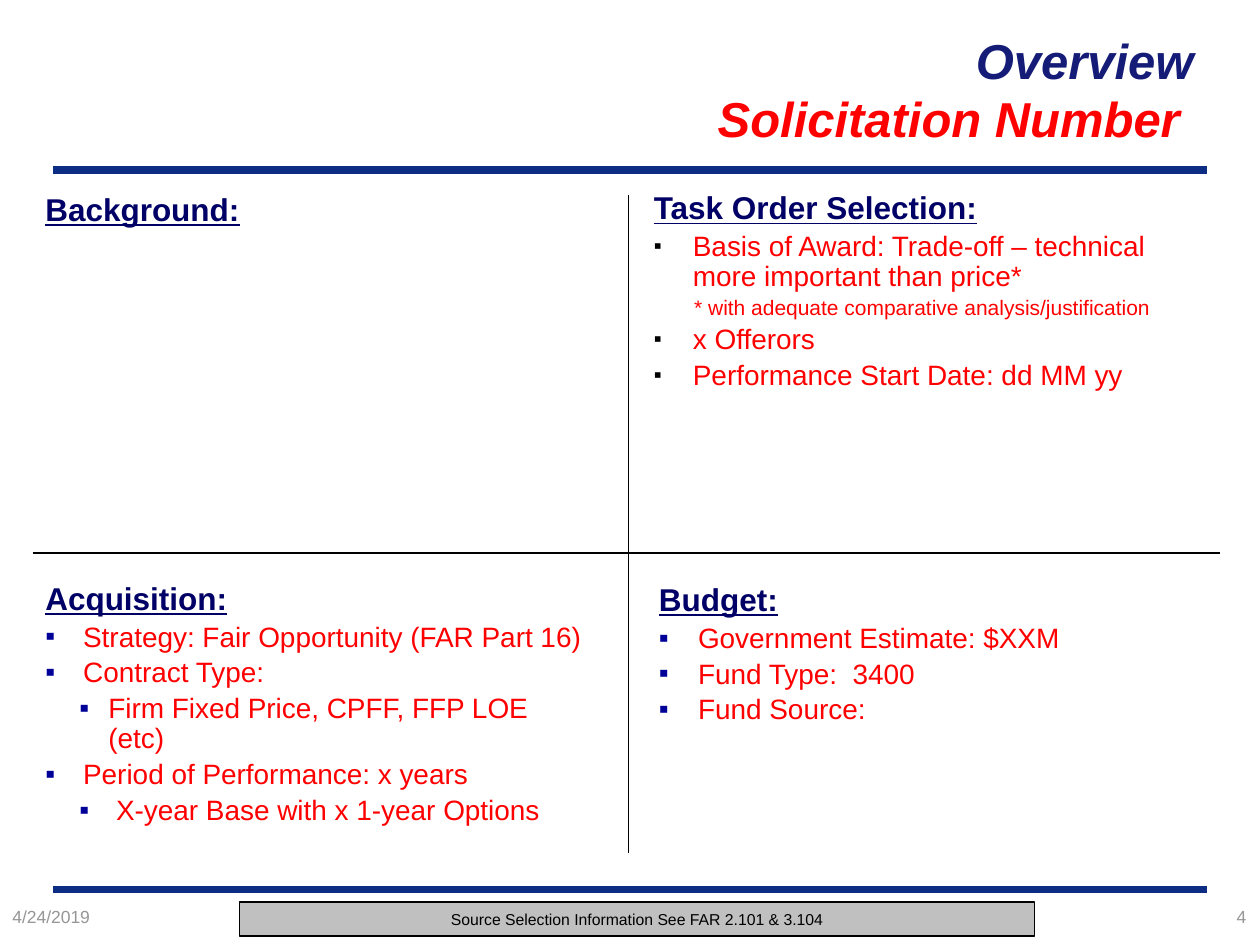
from dataclasses import dataclass

from lxml import etree
from pptx import Presentation
from pptx import util as u
from pptx.dml.color import RGBColor
from pptx.enum import shapes, text
from pptx.oxml.ns import qn

PX = 9144  # EMU per px, 100 px to the inch
COLORS = {
    "rule": "0C2D83", "title": "151C77", "heading": "000066", "bullet": "000099",
    "red": "FF0000", "gray": "969696", "banner": "C0C0C0", "black": "000000",
}


@dataclass
class Level:
    """Paragraph style: left margin, first-line indent and bullet."""
    margin: int
    indent: int = 0
    size: int = 16
    bullet: str = ""
    bullet_percent: int = 100


TASK = Level(31, -31, bullet="black", bullet_percent=80)
NOTE = Level(32, size=12)
ITEM = Level(30, -30, bullet="bullet")
SUB_ITEM = Level(50, -23, bullet="bullet")
BUDGET = Level(31, -31, bullet="bullet")


class SlideBuilder:
    font = "Arial"

    def __init__(self, slide):
        self.slide = slide

    def color(self, name):
        return RGBColor.from_string(COLORS[name])

    def style(self, font, size, color, bold=False, italic=False, underline=False):
        font.name, font.size = self.font, u.Pt(size)
        font.color.rgb = self.color(color)
        font.bold, font.italic, font.underline = bold, italic, underline

    def line(self, start, end, color="black", width=0.75):
        ends = [value * PX for value in (*start, *end)]
        connector = self.slide.shapes.add_connector(shapes.MSO_CONNECTOR.STRAIGHT, *ends)
        connector.line.color.rgb = self.color(color)
        connector.line.width = u.Pt(width)
        etree.SubElement(connector._element.spPr, qn("a:effectLst"))

    def text_box(self, box, anchor=text.MSO_ANCHOR.TOP):
        shape = self.slide.shapes.add_textbox(*(value * PX for value in box))
        frame = shape.text_frame
        frame.word_wrap = True
        frame.vertical_anchor = anchor
        return frame

    def title(self, box, content, colors):
        """Right-aligned title, one colour for each line."""
        frame = self.text_box(box, text.MSO_ANCHOR.MIDDLE)
        paragraph = frame.paragraphs[0]
        paragraph.text = content
        paragraph.alignment = text.PP_ALIGN.RIGHT
        for run, color in zip(paragraph.runs, colors):
            self.style(run.font, 28, color, bold=True, italic=True)

    def footer(self, box, content, alignment):
        paragraph = self.text_box(box).paragraphs[0]
        paragraph.text = content
        paragraph.alignment = alignment
        self.style(paragraph.runs[0].font, 10, "gray")

    def banner(self, box, content):
        shape = self.slide.shapes.add_shape(
            shapes.MSO_SHAPE.RECTANGLE, *(value * PX for value in box))
        shape.shadow.inherit = False
        shape.fill.solid()
        shape.fill.fore_color.rgb = self.color("banner")
        shape.line.color.rgb = self.color("black")
        shape.line.width = u.Pt(0.75)
        frame = shape.text_frame
        frame.text = content
        frame.vertical_anchor = text.MSO_ANCHOR.MIDDLE
        frame.paragraphs[0].alignment = text.PP_ALIGN.CENTER
        self.style(frame.paragraphs[0].runs[0].font, 9, "black")

    def bullet(self, paragraph, level):
        properties = paragraph._p.get_or_add_pPr()
        properties.set("marL", str(level.margin * PX))
        properties.set("indent", str(level.indent * PX))
        if level.bullet:
            color = etree.SubElement(properties, qn("a:buClr"))
            etree.SubElement(color, qn("a:srgbClr"), val=COLORS[level.bullet])
            etree.SubElement(properties, qn("a:buSzPct"), val=str(level.bullet_percent * 1000))
            etree.SubElement(properties, qn("a:buFont"), typeface=self.font)
            etree.SubElement(properties, qn("a:buChar"), char="▪")

    def quadrant(self, box, heading, items=(), spacing=0.9):
        """Underlined heading over (level, text) items."""
        frame = self.text_box(box)
        frame.margin_left = frame.margin_right = 11 * PX
        frame.text = heading
        first = frame.paragraphs[0]
        first.line_spacing = spacing
        self.style(first.runs[0].font, 18, "heading", bold=True, underline=True)
        for level, content in items:
            paragraph = frame.add_paragraph()
            paragraph.text = content
            paragraph.line_spacing = spacing
            paragraph.space_before = u.Pt(level.size * 0.2)
            self.bullet(paragraph, level)
            self.style(paragraph.runs[0].font, level.size, "red")


def main():
    presentation = Presentation()
    presentation.slide_width, presentation.slide_height = 1000 * PX, 750 * PX
    builder = SlideBuilder(presentation.slides.add_slide(presentation.slide_layouts[6]))

    for y in (706, 135):
        builder.line((42, y), (958, y), "rule", 4.5)
    builder.banner((190, 716, 631, 27), "Source Selection Information See FAR 2.101 & 3.104")
    builder.footer((0, 714, 133, 33), "4/24/2019", text.PP_ALIGN.LEFT)
    builder.footer((874, 714, 125, 33), "4", text.PP_ALIGN.RIGHT)
    builder.title((182, 8, 775, 125), "Overview\vSolicitation Number ", ("title", "red"))

    builder.line((26, 439), (968, 439))
    builder.line((499, 155), (499, 677))
    builder.quadrant((25, 146, 465, 45), "Background:", spacing=1.0)
    builder.quadrant((508, 148, 466, 184), "Task Order Selection:", [
        (TASK, "Basis of Award: Trade-off – technical more important than price*"),
        (NOTE, "* with adequate comparative analysis/justification"),
        (TASK, "x Offerors"),
        (TASK, "Performance Start Date: dd MM yy"),
    ])
    builder.quadrant((25, 458, 452, 211), "Acquisition:", [
        (ITEM, "Strategy: Fair Opportunity (FAR Part 16)"),
        (ITEM, "Contract Type:"),
        (SUB_ITEM, "Firm Fixed Price, CPFF, FFP LOE (etc)"),
        (ITEM, "Period of Performance: x years"),
        (SUB_ITEM, " X-year Base with x 1-year Options"),
    ])
    builder.quadrant((512, 459, 469, 227), "Budget:", [
        (BUDGET, "Government Estimate: $XXM"),
        (BUDGET, "Fund Type:  3400"),
        (BUDGET, "Fund Source:"),
    ])
    presentation.save("out.pptx")


if __name__ == "__main__":
    main()
